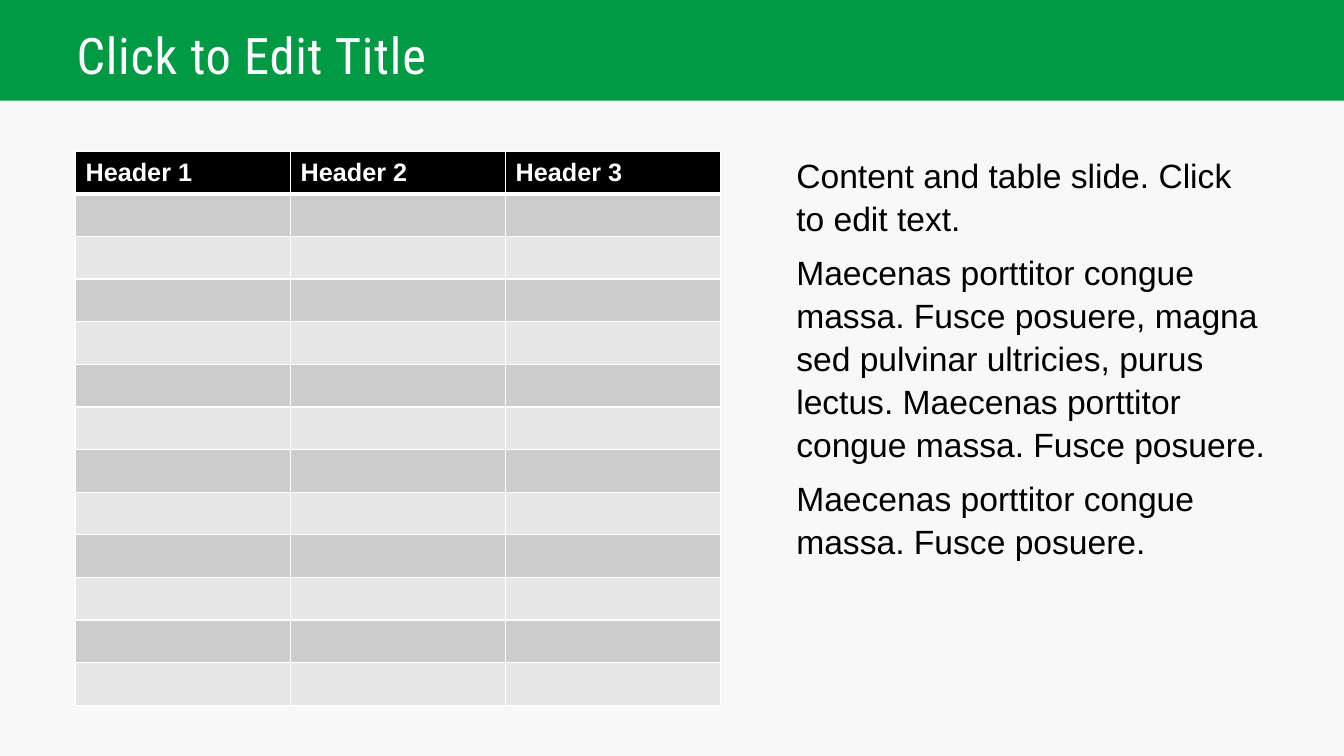
from lxml import etree
from pptx import Presentation
from pptx.dml.color import RGBColor
from pptx.enum.shapes import MSO_SHAPE
from pptx.enum.text import MSO_ANCHOR
from pptx.oxml.ns import qn
from pptx.util import Pt

RECT = MSO_SHAPE.RECTANGLE
TOP, MIDDLE = MSO_ANCHOR.TOP, MSO_ANCHOR.MIDDLE

# Content
TITLE = "Click to Edit Title"
HEADERS = ["Header 1", "Header 2", "Header 3"]
BODY_ROWS = 12
BODY = [
    "Content and table slide. Click to edit text.",
    "Maecenas porttitor congue massa. Fusce posuere, magna sed pulvinar ultricies, "
    "purus lectus. Maecenas porttitor congue massa. Fusce posuere.",
    "Maecenas porttitor congue massa. Fusce posuere.",
]

# Theme
THEME = {
    "background": "F8F8F8", "banner": "009A44", "white": "FFFFFF", "black": "000000",
    "bands": ("CCCCCC", "E7E7E7"),
    "title_font": "Roboto Condensed", "body_font": "Arial",
    "title_size": 36, "header_size": 18, "body_size": 24,
}

# Layout, in points
SLIDE_W, SLIDE_H, BANNER_H = 960, 540, 72
TITLE_BOX = (54.72, 0, 720, BANNER_H)
TABLE_X, TABLE_Y, TABLE_W, TABLE_H = 54, 108, 460.8, 396
BODY_BOX = (568.8, 108.72, 336.96, 396)
THIN, THICK = 1, 3


def paint(fill, color):
    fill.solid()
    fill.fore_color.rgb = RGBColor.from_string(color)


def style(p, font, size, color, bold=False):
    for r in p.runs:
        r.font.name, r.font.size, r.font.bold = font, Pt(size), bold
        r.font.color.rgb = RGBColor.from_string(color)


def add_text(s, box, anchor, top_inset=0):
    tf = s.shapes.add_textbox(*map(Pt, box)).text_frame
    tf.word_wrap = True
    tf.vertical_anchor = anchor
    tf.margin_left = tf.margin_right = tf.margin_bottom = 0
    tf.margin_top = Pt(top_inset)
    return tf


def set_borders(cell, top, bottom):
    tc_pr = cell._tc.get_or_add_tcPr()
    for side, width in (("L", THIN), ("R", THIN), ("T", top), ("B", bottom)):
        ln = etree.SubElement(tc_pr, qn(f"a:ln{side}"), w=str(Pt(width)))
        fill = etree.SubElement(ln, qn("a:solidFill"))
        etree.SubElement(fill, qn("a:srgbClr"), val=THEME["white"])


prs = Presentation()
prs.slide_width, prs.slide_height = Pt(SLIDE_W), Pt(SLIDE_H)
s = prs.slides.add_slide(prs.slide_layouts[6])
paint(s.background.fill, THEME["background"])

# Banner and title
banner = s.shapes.add_shape(RECT, 0, 0, Pt(SLIDE_W), Pt(BANNER_H))
banner.shadow.inherit = False
paint(banner.fill, THEME["banner"])
banner.line.fill.background()

p = add_text(s, TITLE_BOX, MIDDLE, top_inset=10.8).paragraphs[0]
p.text = TITLE
p.line_spacing = 0.9
style(p, THEME["title_font"], THEME["title_size"], THEME["white"])
p.runs[0].font._element.set("spc", "60")

# Table with banded rows
rows = BODY_ROWS + 1
table = s.shapes.add_table(rows, len(HEADERS), Pt(TABLE_X), Pt(TABLE_Y),
                           Pt(TABLE_W), Pt(TABLE_H)).table
for column in table.columns:
    column.width = Pt(TABLE_W / len(HEADERS))
for i, row in enumerate(table.rows):
    row.height = Pt(TABLE_H / rows)
    for j, cell in enumerate(row.cells):
        set_borders(cell, THICK if i == 1 else THIN, THICK if i == 0 else THIN)
        paint(cell.fill, THEME["bands"][(i - 1) % 2] if i else THEME["black"])
        if i == 0:
            cell.text = HEADERS[j]
            cell.vertical_anchor = MIDDLE
            style(cell.text_frame.paragraphs[0], THEME["body_font"],
                  THEME["header_size"], THEME["white"], bold=True)

# Body text
tf = add_text(s, BODY_BOX, TOP)
tf.text = "\n".join(BODY)
for p in tf.paragraphs:
    p.line_spacing, p.space_before = Pt(30.8), Pt(7.5)
    style(p, THEME["body_font"], THEME["body_size"], THEME["black"])

prs.save("out.pptx")
